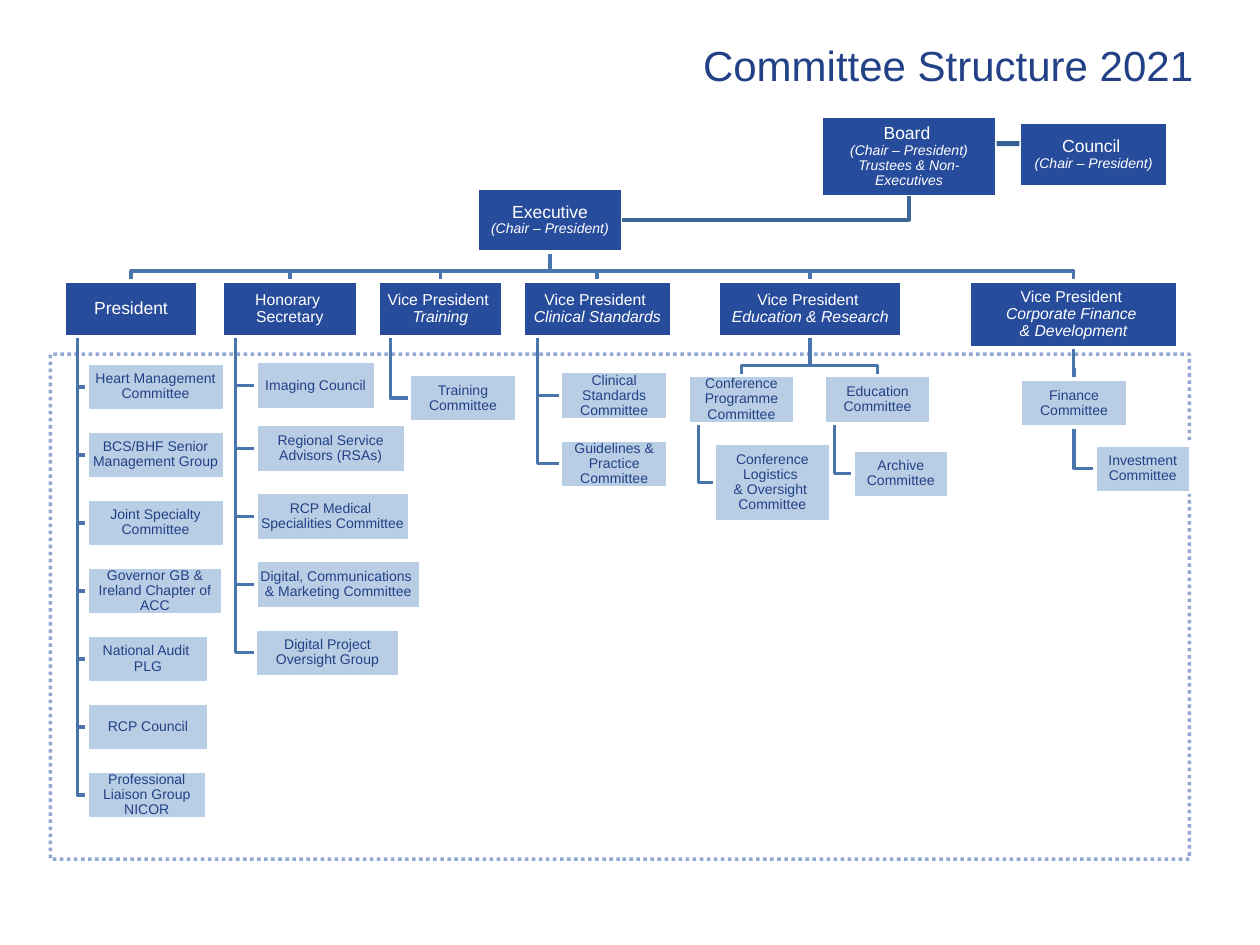
from dataclasses import dataclass, field

from lxml.etree import SubElement
from pptx import Presentation
from pptx.dml.color import RGBColor as RGB
from pptx.enum.dml import MSO_LINE
from pptx.enum.shapes import MSO_SHAPE as SHAPE
from pptx.enum.text import MSO_ANCHOR as ANCHOR, MSO_AUTO_SIZE as AUTO, PP_ALIGN as ALIGN
from pptx.oxml.ns import qn
from pptx.util import Inches, Pt


@dataclass(frozen=True)
class Theme:
    font: str = "Arial"
    ink: RGB = RGB.from_string("224186")
    white: RGB = RGB.from_string("FFFFFF")
    office: RGB = RGB.from_string("284C9C")
    committee: RGB = RGB.from_string("B9CDE5")
    link: RGB = RGB.from_string("4875AC")
    board_link: RGB = RGB.from_string("3F6797")
    council_link: RGB = RGB.from_string("376092")
    frame: RGB = RGB.from_string("3E65B4")
    title: Pt = Pt(24)
    large: Pt = Pt(10)
    medium: Pt = Pt(9)
    small: Pt = Pt(8)
    line: Pt = Pt(2)


T = Theme()


@dataclass
class Node:
    """A box of the chart; dx and dy are measured from its parent's corner."""
    runs: list
    dx: float
    dy: float
    w: float
    h: float
    kids: list = field(default_factory=list)
    fork: bool = False    # links run from the bottom centre to the tops of the kids
    spine: float = 0.1    # share of the width where side links start
    fill: RGB = T.office
    color: RGB = T.white
    inset: float = 0.01

    def box(self, x, y):
        return x + self.dx, y + self.dy, self.w, self.h


def committee(text, dx, dy, w=0.85, h=0.38, **more):
    return Node([(text, T.small, False)], dx, dy, w, h,
                fill=T.committee, color=T.ink, **more)


def stack(dx, dy, items, pitch=0.54):
    return [committee(text, dx, dy + i * pitch, w) for i, (text, w) in enumerate(items)]


def vice_president(area, dx, w, kids, h=0.44, **more):
    runs = [("Vice President \n", T.medium, False), (area, T.medium, True)]
    return Node(runs, dx, 0.74, w, h, kids, **more)


CHAIR = ("(Chair – President)", T.small, True)

PRESIDENT = Node([("President", T.large, False)], -3.28, 0.74, 1.06, 0.44, stack(0.18, 0.65, [
    ("Heart Management Committee", 1.09),
    ("BCS/BHF Senior Management Group", 1.09),
    ("Joint Specialty Committee", 1.09),
    ("Governor GB & Ireland Chapter of ACC", 1.08),
    ("National Audit \nPLG", 0.97),
    ("RCP Council", 0.97),
    ("Professional Liaison Group NICOR", 0.95),
]))

SECRETARY = Node([("Honorary \nSecretary", T.medium, False)], -2.03, 0.74, 1.08, 0.44, [
    committee("Imaging Council", 0.27, 0.64, 0.95),
    *stack(0.27, 1.14, [
        ("Regional Service Advisors (RSAs)", 1.19),
        ("RCP Medical \nSpecialities Committee", 1.22),
        ("Digital, Communications \n& Marketing Committee", 1.31),
        ("Digital Project Oversight Group", 1.14),
    ]),
])

TRAINING = vice_president("Training", -0.79, 0.99, [committee("Training Committee", 0.25, 0.74)])

STANDARDS = vice_president("Clinical Standards", 0.36, 1.18, stack(0.3, 0.72, [
    ("Clinical Standards Committee", 0.85),
    ("Guidelines & Practice Committee", 0.85),
]))

EDUCATION = vice_president("Education & Research", 1.91, 1.46, [
    committee("Conference Programme Committee", -0.24, 0.75, kids=[
        committee("Conference Logistics \n& Oversight \nCommittee", 0.21, 0.54, 0.92, 0.62)]),
    committee("Education Committee", 0.84, 0.75, kids=[
        committee("Archive Committee", 0.23, 0.59, 0.76)]),
], fork=True)

FINANCE = vice_president("Corporate Finance \n& Development", 3.9, 1.66, [
    committee("Finance Committee", 0.41, 0.78, spine=0.5, kids=[
        committee("Investment Committee", 0.59, 0.52, 0.76)]),
], h=0.53, fork=True)

EXECUTIVE = Node([("Executive\n", T.large, False), CHAIR], 3.79, 1.49, 1.15, 0.51,
                 [PRESIDENT, SECRETARY, TRAINING, STANDARDS, EDUCATION, FINANCE], fork=True)
BOARD = Node([("Board", T.large, False), (" \n", T.medium, False),
              ("(Chair – President)\nTrustees & Non-Executives", T.small, True)],
             6.52, 0.92, 1.39, 0.64, inset=0.04)
COUNCIL = Node([("Council \n", T.large, False), CHAIR], 8.09, 0.97, 1.18, 0.51)


def set_all(obj, **values):
    for name, value in values.items():
        setattr(obj, name, value)


def add_rect(slide, box, fill=None):
    sp = slide.shapes.add_shape(SHAPE.RECTANGLE, *map(Inches, box))
    sp.shadow.inherit = False
    if fill is None:
        sp.fill.background()
    else:
        sp.fill.solid()
        sp.fill.fore_color.rgb = fill
    return sp


def set_line(sp, color):
    sp.line.color.rgb = color
    sp.line.width = T.line


def add_link(slide, points, color=T.link):
    start, *rest = [tuple(map(Inches, point)) for point in points]
    builder = slide.shapes.build_freeform(*start)
    builder.add_line_segments(rest, close=False)
    sp = builder.convert_to_shape()
    sp.shadow.inherit = False
    sp.fill.background()
    set_line(sp, color)


def write_runs(p, runs, color):
    """Fill a paragraph; each line break takes the size of its run."""
    for text, size, italic in runs:
        for i, part in enumerate(text.split("\n")):
            if i:
                p.add_line_break()
                SubElement(p._p.findall(qn("a:br"))[-1], qn("a:rPr"), sz=str(int(size.pt * 100)))
            if part:
                r = p.add_run()
                r.text = part
                set_all(r.font, name=T.font, size=size, italic=italic)
                r.font.color.rgb = color


def draw_links(slide, node, x=0, y=0):
    left, top, w, h = node.box(x, y)
    bottom = top + h
    for kid in node.kids:
        kx, ky, kw, kh = kid.box(left, top)
        if node.fork:
            start, end, bus = left + w / 2, kx + kw / 2, ky - 0.08
            points = [(start, bottom), (start, bus), (end, bus), (end, ky)]
        else:
            start, middle = left + w * node.spine, ky + kh / 2
            points = [(start, bottom), (start, middle), (kx, middle)]
        add_link(slide, points)
        draw_links(slide, kid, left, top)


def draw_boxes(slide, node, x=0, y=0):
    box = node.box(x, y)
    sp = add_rect(slide, box, node.fill)
    set_line(sp, T.white)
    tf = sp.text_frame
    side, edge = Inches(node.inset), Inches(0.01)
    set_all(tf, word_wrap=True, vertical_anchor=ANCHOR.MIDDLE, margin_left=side,
            margin_right=side, margin_top=edge, margin_bottom=edge)
    p = tf.paragraphs[0]
    set_all(p, alignment=ALIGN.CENTER, line_spacing=0.9)
    write_runs(p, node.runs, node.color)
    for kid in node.kids:
        draw_boxes(slide, kid, *box[:2])


def draw_frame(slide, box):
    sp = add_rect(slide, box)
    set_line(sp, T.frame)
    sp.line.dash_style = MSO_LINE.ROUND_DOT
    color = sp.element.find(f".//{qn('a:ln')}//{qn('a:srgbClr')}")
    SubElement(color, qn("a:alpha"), val="56000")


def draw_title(slide, box):
    sp = slide.shapes.title
    set_all(sp, **dict(zip(("left", "top", "width", "height"), map(Inches, box))))
    tf = sp.text_frame
    set_all(tf, auto_size=AUTO.NONE, word_wrap=True, vertical_anchor=ANCHOR.MIDDLE,
            margin_left=0, margin_right=0)
    p = tf.paragraphs[0]
    p.alignment = ALIGN.CENTER
    write_runs(p, [("Committee Structure 2021", T.title, False)], T.ink)


def draw_board_links(slide):
    x, y, w, h = BOARD.box(0, 0)
    ex, ey, ew, eh = EXECUTIVE.box(0, 0)
    corner = x + w / 2, ey + eh / 2
    add_link(slide, [(corner[0], y + h), corner, (ex + ew, corner[1])], T.board_link)
    bar = add_rect(slide, (x + w, 1.12, COUNCIL.dx - x - w, 0.04), T.council_link)
    bar.line.fill.background()


def main():
    prs = Presentation()
    prs.slide_width, prs.slide_height = Inches(10), Inches(7.5)
    slide = prs.slides.add_slide(prs.slide_layouts[5])
    draw_title(slide, (5.47, 0.26, 4.11, 0.5))
    draw_frame(slide, (0.4, 2.81, 9.04, 4.01))
    draw_links(slide, EXECUTIVE)
    for node in (BOARD, EXECUTIVE, COUNCIL):
        draw_boxes(slide, node)
    draw_board_links(slide)
    prs.save("out.pptx")


if __name__ == "__main__":
    main()
